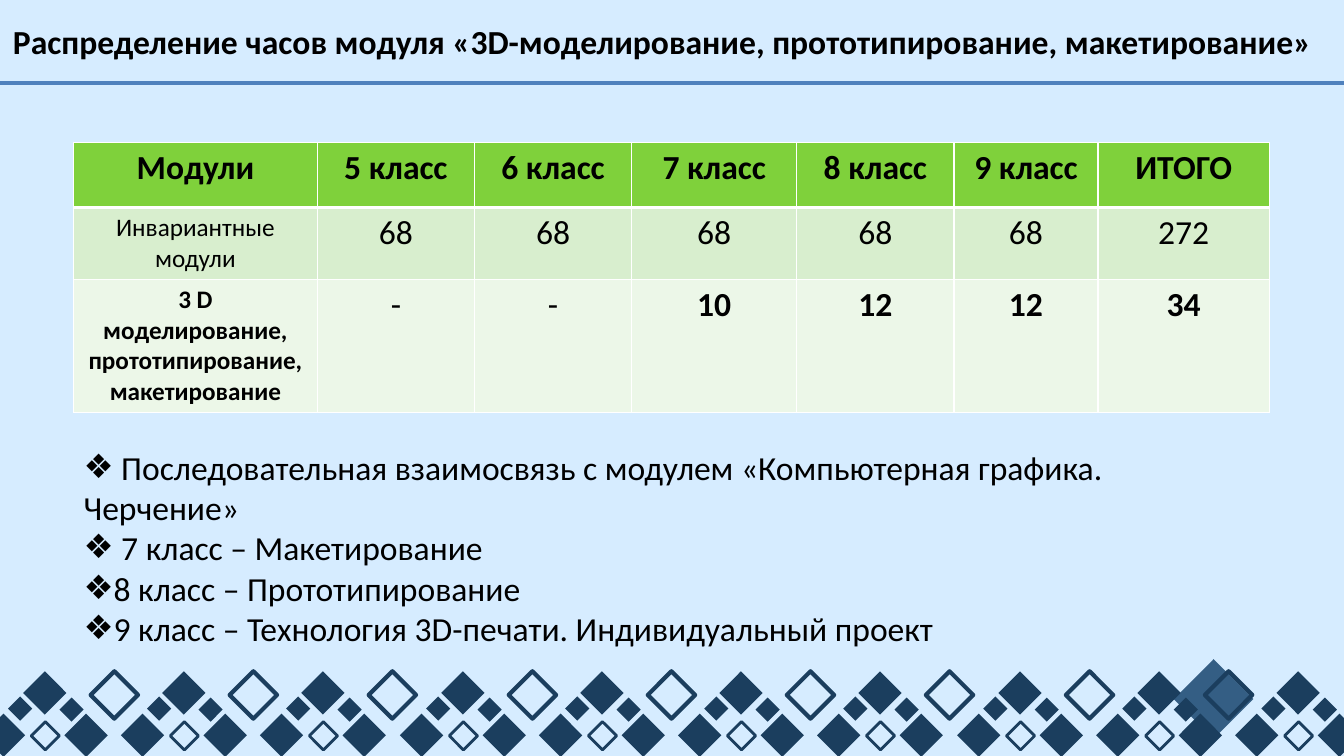
from dataclasses import dataclass

from lxml.etree import SubElement
from pptx import Presentation
from pptx.dml.color import RGBColor
from pptx.enum.shapes import MSO_CONNECTOR, MSO_SHAPE
from pptx.enum.text import MSO_ANCHOR, MSO_AUTO_SIZE, PP_ALIGN
from pptx.oxml.ns import qn
from pptx.util import Pt

PX = 9144  # EMU per px, 100 px to the inch
WIDTH, HEIGHT = 1334, 750


@dataclass(frozen=True)
class Theme:
    font: str = "Calibri"
    text_size: int = 24
    label_size: int = 18
    background: str = "D6ECFF"
    text: str = "000000"
    rule: str = "4F81BD"
    diamond: str = "1B3E5E"
    accent_diamond: str = "345E84"
    border: str = "FFFFFF"
    row_fills: tuple = ("7FD13B", "D8EECE", "ECF7E8")


class SlideBuilder:
    def __init__(self, page, theme):
        self.page, self.theme = page, theme
        page.background.fill.solid()
        page.background.fill.fore_color.rgb = RGBColor.from_string(theme.background)

    def style(self, para, size, bold=False, align=PP_ALIGN.LEFT):
        para.alignment = align
        para.line_spacing = 1.0
        para.space_before = para.space_after = Pt(0)
        font = para.font
        font.name, font.size, font.bold = self.theme.font, Pt(size), bold
        font.color.rgb = RGBColor.from_string(self.theme.text)

    def place(self, box, left, top, width, height):
        box.left, box.top = left * PX, top * PX
        box.width, box.height = width * PX, height * PX
        frame = box.text_frame
        frame.word_wrap = True
        frame.auto_size = MSO_AUTO_SIZE.NONE
        frame.vertical_anchor = MSO_ANCHOR.TOP
        return frame

    def title(self, text, *bounds):
        frame = self.place(self.page.shapes.title, *bounds)
        frame.text = text
        self.style(frame.paragraphs[0], self.theme.text_size, True, PP_ALIGN.CENTER)

    def bullets(self, items, *bounds):
        frame = self.place(self.page.placeholders[1], *bounds)
        frame.text = "\n".join(items)
        for para in frame.paragraphs:
            properties = para._p.get_or_add_pPr()
            properties.set("marL", "0")
            properties.set("indent", "0")
            SubElement(properties, qn("a:buChar"), char="❖")
            self.style(para, self.theme.text_size)

    def rule(self, top, weight):
        line = self.page.shapes.add_connector(
            MSO_CONNECTOR.STRAIGHT, 0, top * PX, WIDTH * PX, top * PX)
        line.line.color.rgb = RGBColor.from_string(self.theme.rule)
        line.line.width = Pt(weight)
        SubElement(line._element.spPr, qn("a:effectLst"))

    def diamond(self, left, top, size, color, outline=0):
        shape = self.page.shapes.add_shape(
            MSO_SHAPE.DIAMOND, left * PX, top * PX, size * PX, size * PX)
        shape.shadow.inherit = False
        if outline:
            shape.fill.background()
            shape.line.color.rgb = RGBColor.from_string(color)
            shape.line.width = Pt(outline)
        else:
            shape.fill.solid()
            shape.fill.fore_color.rgb = RGBColor.from_string(color)
            shape.line.fill.background()

    def borders(self, cell, top, bottom):
        properties = cell._tc.get_or_add_tcPr()
        for side, weight in (("L", 1), ("R", 1), ("T", top), ("B", bottom)):
            line = SubElement(properties, qn(f"a:ln{side}"), w=str(Pt(weight)))
            fill = SubElement(line, qn("a:solidFill"))
            SubElement(fill, qn("a:srgbClr"), val=self.theme.border)

    def table(self, rows, left, top, widths, heights):
        grid = self.page.shapes.add_table(
            len(rows), len(widths), left * PX, top * PX,
            sum(widths) * PX, sum(heights) * PX).table
        grid.first_row = grid.horz_banding = False
        for column, width in zip(grid.columns, widths):
            column.width = width * PX
        for r, values in enumerate(rows):
            grid.rows[r].height = heights[r] * PX
            for c, value in enumerate(values):
                cell = grid.cell(r, c)
                self.borders(cell, 3 if r == 1 else 1, 3 if r == 0 else 1)
                cell.fill.solid()
                cell.fill.fore_color.rgb = RGBColor.from_string(self.theme.row_fills[r])
                cell.text = value
                is_label = r > 0 and c == 0
                size = self.theme.label_size if is_label else self.theme.text_size
                bold = r != 1 and value != "-"
                self.style(cell.text_frame.paragraphs[0], size, bold, PP_ALIGN.CENTER)


# One repeat of the border: left, top, size, outline weight (0 is filled)
MOTIF = (
    (-18, 708, 43, 0), (31, 716, 28, 2), (23, 666, 43, 0),
    (64, 708, 43, 0), (8, 691, 24, 0), (59, 692, 24, 0),
)
LARGE_OUTLINE = (90, 666, 47, 3)
REPEATS = 10
SPAN = 1244  # from the first repeat to the last

HOURS = (
    ("Модули", "5 класс", "6 класс", "7 класс", "8 класс", "9 класс", "ИТОГО"),
    ("Инвариантные модули", "68", "68", "68", "68", "68", "272"),
    ("3 D моделирование, прототипирование, макетирование",
     "-", "-", "10", "12", "12", "34"),
)
TOPICS = (
    " Последовательная взаимосвязь с модулем «Компьютерная графика. Черчение»",
    " 7 класс – Макетирование",
    "8 класс – Прототипирование",
    "9 класс – Технология 3D-печати. Индивидуальный проект",
)


def main():
    deck = Presentation()
    deck.slide_width, deck.slide_height = WIDTH * PX, HEIGHT * PX
    theme = Theme()
    builder = SlideBuilder(deck.slides.add_slide(deck.slide_layouts[1]), theme)

    # Diamond border along the bottom
    builder.diamond(1165, 654, 79, theme.accent_diamond)
    for repeat in range(REPEATS):
        shift = round(repeat * SPAN / (REPEATS - 1))
        motif = MOTIF + (LARGE_OUTLINE,) if repeat < REPEATS - 1 else MOTIF
        for left, top, size, outline in motif:
            builder.diamond(left + shift, top, size, theme.diamond, outline)

    # Heading and rule
    builder.rule(82, 3)
    builder.title(
        "Распределение часов модуля «3D-моделирование, прототипирование, макетирование»",
        0, 16, 1315, 50)

    # Hours by class
    builder.table(HOURS, 73, 141, (242, 156, 156, 164, 156, 143, 170), (65, 65, 76))

    # Topics by class
    builder.bullets(TOPICS, 73, 438, 1188, 212)

    deck.save("out.pptx")


if __name__ == "__main__":
    main()
